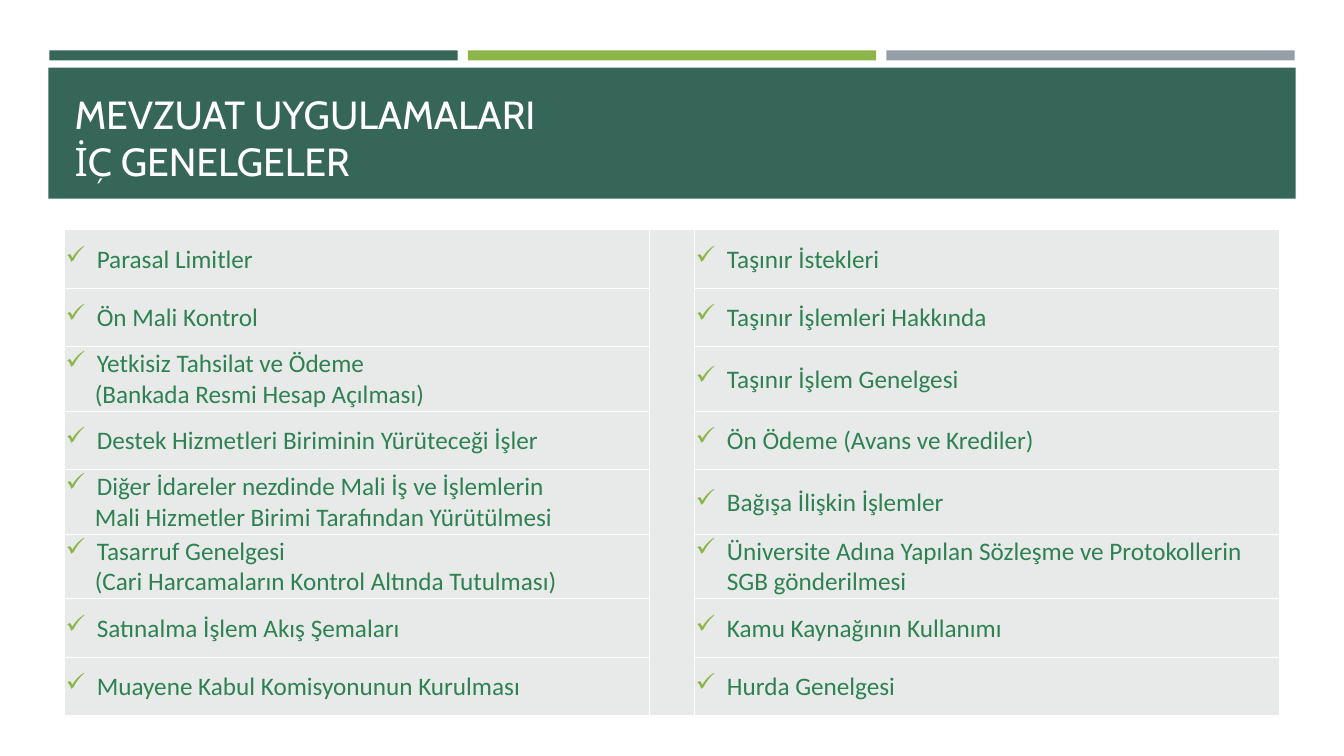
"""Build the slide that lists the internal circulars in a two-column table."""
from copy import deepcopy

from lxml import etree
from pptx import Presentation, util as u
from pptx.dml import color as c
from pptx.enum import shapes, text as t
from pptx.oxml import ns

THEME = {
    "dark": "366658", "lime": "8CB64A", "grey": "969FA7", "cell": "E8EAEA",
    "white": "FFFFFF", "text": "2E8151",
    "title_font": "Cabin", "body_font": "Calibri", "title_size": 28, "body_size": 18,
}


def write(paragraph, text, *, font, size, color, margin=0, indent=0, bullet=None):
    """Fill a paragraph with formatted text and an optional bullet."""
    paragraph.text = text
    paragraph.alignment = t.PP_ALIGN.LEFT
    for run in paragraph.runs:
        run.font.name, run.font.size = font, u.Pt(size)
        run.font.color.rgb = c.RGBColor.from_string(color)
    for line_break in paragraph._p.findall(ns.qn("a:br")):
        line_break.append(deepcopy(paragraph.runs[0].font._element))
    properties = paragraph._p.get_or_add_pPr()
    properties.set("marL", str(u.Inches(margin)))
    properties.set("indent", str(u.Inches(indent)))
    if bullet:
        bullet_color = etree.SubElement(properties, ns.qn("a:buClr"))
        etree.SubElement(bullet_color, ns.qn("a:srgbClr"), val=THEME["lime"])
        etree.SubElement(properties, ns.qn("a:buChar"), char=bullet)


presentation = Presentation()
presentation.slide_width, presentation.slide_height = u.Inches(13.33), u.Inches(7.5)
slide = presentation.slides.add_slide(presentation.slide_layouts[5])

bars = [(0.49 + 4.15 * i, 0.5, 4.05, 0.1, name) for i, name in enumerate(("dark", "lime", "grey"))]
title_band = (0.48, 0.67, 12.37, 1.3, "dark")
for left, top, width, height, name in [*bars, title_band]:
    shape = slide.shapes.add_shape(
        shapes.MSO_SHAPE.RECTANGLE,
        u.Inches(left), u.Inches(top), u.Inches(width), u.Inches(height))
    shape.shadow.inherit = False
    shape.fill.solid()
    shape.fill.fore_color.rgb = c.RGBColor.from_string(THEME[name])
    shape.line.fill.background()

title = slide.shapes.title
title.left, title.top = u.Inches(0.64), u.Inches(0.77)
title.width, title.height = u.Inches(12.06), u.Inches(1.11)
title.text_frame.vertical_anchor = t.MSO_ANCHOR.BOTTOM
title.text_frame.auto_size = t.MSO_AUTO_SIZE.NONE
write(title.text_frame.paragraphs[0], "MEVZUAT UYGULAMALARI\nİÇ GENELGELER",
      font=THEME["title_font"], size=THEME["title_size"], color=THEME["white"])
slide.shapes._spTree.append(title._element)

circulars = [
    (["Parasal Limitler"], ["Taşınır İstekleri"]),
    (["Ön Mali Kontrol"], ["Taşınır İşlemleri Hakkında"]),
    (["Yetkisiz Tahsilat ve Ödeme", "(Bankada Resmi Hesap Açılması)"],
     ["Taşınır İşlem Genelgesi"]),
    (["Destek Hizmetleri Biriminin Yürüteceği İşler"], ["Ön Ödeme (Avans ve Krediler)"]),
    (["Diğer İdareler nezdinde Mali İş ve İşlemlerin",
      "Mali Hizmetler Birimi Tarafından Yürütülmesi"], ["Bağışa İlişkin İşlemler"]),
    (["Tasarruf Genelgesi", "(Cari Harcamaların Kontrol Altında Tutulması)"],
     ["Üniversite Adına Yapılan Sözleşme ve Protokollerin SGB gönderilmesi"]),
    (["Satınalma İşlem Akış Şemaları"], ["Kamu Kaynağının Kullanımı"]),
    (["Muayene Kabul Komisyonunun Kurulması"], ["Hurda Genelgesi"]),
]
table = slide.shapes.add_table(
    len(circulars), 3, u.Inches(0.64), u.Inches(2.28), u.Inches(12.06), u.Inches(4.84)).table
table.first_row = table.horz_banding = False
for column, width in zip(table.columns, (5.8, 0.45, 5.8)):
    column.width = u.Inches(width)
table.cell(0, 1).merge(table.cell(len(circulars) - 1, 1))

for cell in table.iter_cells():
    cell_properties = cell._tc.get_or_add_tcPr()
    for side in ("lnL", "lnR", "lnT", "lnB"):
        border = etree.SubElement(cell_properties, ns.qn(f"a:{side}"), w=str(u.Pt(1)))
        border_fill = etree.SubElement(border, ns.qn("a:solidFill"))
        etree.SubElement(border_fill, ns.qn("a:srgbClr"), val=THEME["white"])
    cell.fill.solid()
    cell.fill.fore_color.rgb = c.RGBColor.from_string(THEME["cell"])
    cell.vertical_anchor = t.MSO_ANCHOR.MIDDLE
    cell.margin_left = cell.margin_right = cell.margin_top = u.Inches(0.01)
    cell.margin_bottom = 0

body = {"font": THEME["body_font"], "size": THEME["body_size"], "color": THEME["text"]}
for row, (left_lines, right_lines) in enumerate(circulars):
    table.rows[row].height = u.Inches(0.64 if len(left_lines) > 1 else 0.58)
    for column, (heading, *details) in ((0, left_lines), (2, right_lines)):
        frame = table.cell(row, column).text_frame
        write(frame.paragraphs[0], heading, margin=0.31, indent=-0.31, bullet="✓", **body)
        for detail in details:
            write(frame.add_paragraph(), detail, indent=0.29, **body)

presentation.save("out.pptx")
